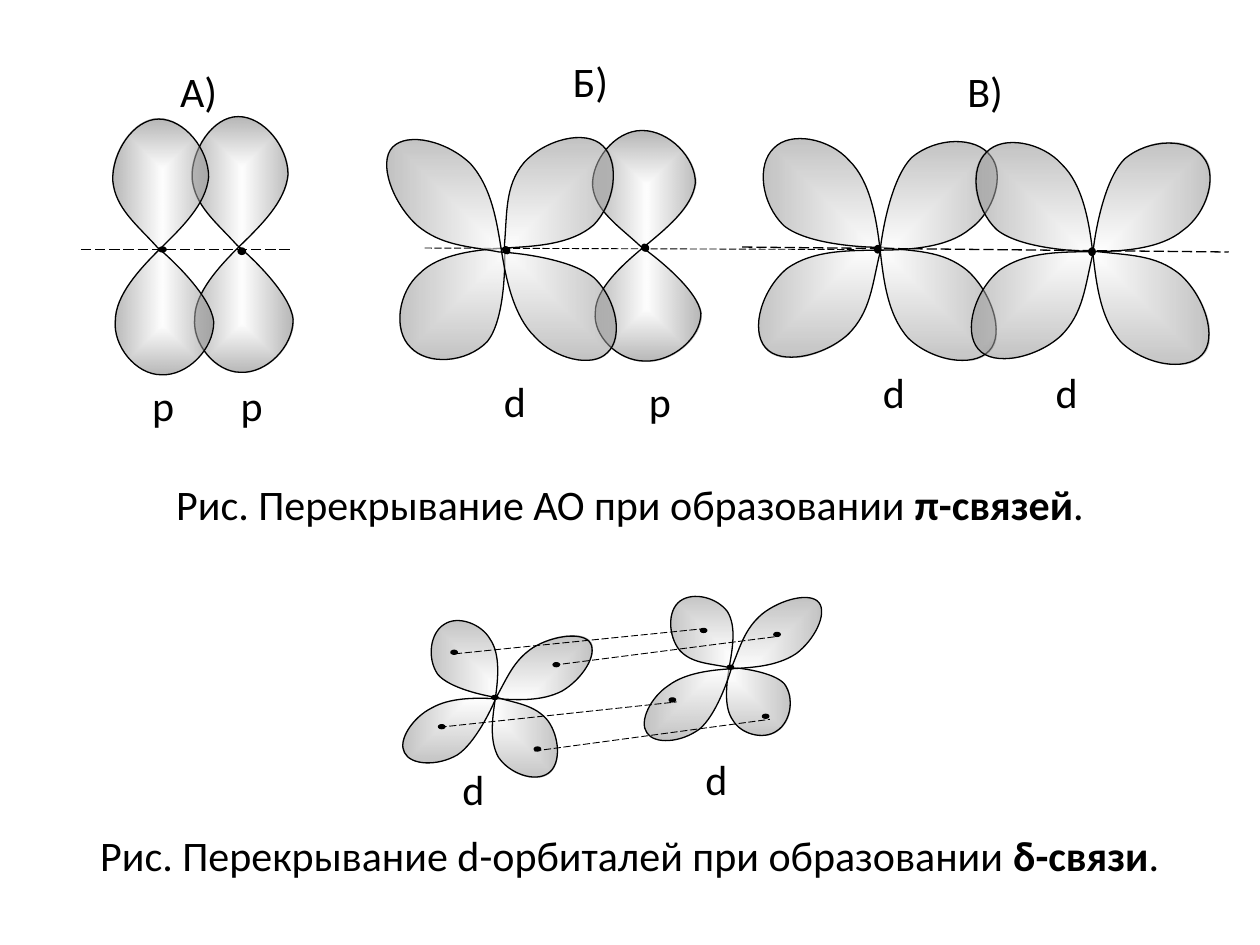
from typing import NamedTuple

from lxml import etree
from pptx import Presentation
from pptx.dml.color import RGBColor
from pptx.enum import dml, shapes, text
from pptx.oxml import parse_xml
from pptx.util import Cm, Pt

BLACK = RGBColor(0x00, 0x00, 0x00)
FONT = "Calibri"
A_NS = "http://schemas.openxmlformats.org/drawingml/2006/main"
LOBE_FILL = f"""<a:gradFill xmlns:a="{A_NS}" rotWithShape="1"><a:gsLst>
<a:gs pos="0"><a:srgbClr val="FFFFFF"><a:alpha val="54000"/></a:srgbClr></a:gs>
<a:gs pos="100000"><a:srgbClr val="7A7A7A"><a:alpha val="55000"/></a:srgbClr></a:gs>
</a:gsLst><a:path path="rect">
<a:fillToRect l="50000" t="50000" r="50000" b="50000"/></a:path></a:gradFill>"""

# Horizontal two-lobed outline: start point, then cubic Bezier segments
LOBE_SIZE = (204, 80)
LOBE_START = (102, 36)
LOBE_CURVES = [
    ((120, 20), (133, 3), (155, 1)),
    ((177, 0), (204, 17), (204, 37)),
    ((204, 57), (180, 76), (158, 76)),
    ((136, 74), (117, 54), (101, 38)),
    ((85, 22), (64, 3), (44, 3)),
    ((24, 1), (1, 19), (1, 39)),
    ((0, 59), (21, 80), (43, 80)),
    ((63, 78), (92, 48), LOBE_START),
]


class Orbital(NamedTuple):
    left: float
    top: float
    width: float
    height: float
    rotation: float


class Dot(NamedTuple):
    left: float
    top: float
    width: float = 0.13
    height: float = 0.08
    rotation: float = 0


class Dash(NamedTuple):
    x1: float
    y1: float
    x2: float
    y2: float
    weight: float = 0.5


class Label(NamedTuple):
    text: str
    left: float
    top: float


class Figure(NamedTuple):
    orbitals: list[Orbital]
    dots: list[Dot]
    axes: list[Dash]
    labels: list[Label]
    axes_behind: bool = False


FIGURES = [
    Figure(  # d-p overlap
        [Orbital(10.69, 3.86, 4.67, 2.21, 270),
         Orbital(7.42, 4.01, 5.64, 2.01, 314.2),
         Orbital(7.11, 4.14, 6.02, 1.75, 224.2)],
        [Dot(10.13, 4.98, 0.15, 0.13, 44.2), Dot(12.93, 4.93, 0.15, 0.13, 44.2)],
        [Dash(8.56, 5, 17.22, 5.03)],
        [Label("Б)", 11.3, 0.99), Label("d", 9.91, 7.44), Label("p", 12.83, 7.44)],
        axes_behind=True),
    Figure(  # p-p overlap
        [Orbital(2.29, 3.91, 5.18, 2.06, 270),
         Orbital(0.69, 3.96, 5.18, 2.06, 270)],
        [Dot(3.2, 4.98, 0.15, 0.1), Dot(4.8, 5, 0.15, 0.13)],
        [Dash(1.63, 5.03, 5.89, 5.03, 0.75)],
        [Label("А)", 3.38, 1.19), Label("p", 2.82, 7.52), Label("p", 4.6, 7.52)]),
    Figure(  # d-d overlap
        [Orbital(14.73, 4.09, 5.99, 1.93, 43.8),
         Orbital(14.68, 4.06, 5.99, 1.93, 140),
         Orbital(19.02, 4.17, 5.99, 1.93, 43.8),
         Orbital(18.97, 4.09, 5.99, 1.93, 140)],
        [Dot(17.63, 4.95, 0.13, 0.15), Dot(21.95, 5, 0.13, 0.15)],
        [Dash(14.96, 4.98, 24.77, 5.08, 0.75)],
        [Label("В)", 19.25, 1.19), Label("d", 17.55, 7.26), Label("d", 21.03, 7.26)]),
    Figure(  # delta bond
        [Orbital(13.08, 12.75, 3.28, 1.32, 233.8),
         Orbital(12.6, 12.93, 4.37, 1.12, 323.3),
         Orbital(7.85, 13.54, 4.37, 1.12, 329.9),
         Orbital(8.13, 13.44, 3.68, 1.32, 55.6)],
        [Dot(8.84, 14.61), Dot(14.66, 13.41), Dot(9.91, 14.02), Dot(10.77, 15.06),
         Dot(9.09, 13.11), Dot(14.12, 12.67), Dot(13.49, 14.07), Dot(15.6, 12.75),
         Dot(15.37, 14.4), Dot(11.15, 13.36)],
        [Dash(11.15, 13.41, 15.67, 12.83), Dash(9.17, 13.18, 14.22, 12.67),
         Dash(8.86, 14.66, 13.64, 14.15), Dash(10.77, 15.14, 15.52, 14.5)],
        [Label("d", 9.07, 15.27), Label("d", 13.97, 15.06)]),
]


def lobe_outline():
    """Return the curved outline as an a:path element."""
    def points(*pts):
        return "".join(f'<a:pt x="{x}" y="{y}"/>' for x, y in pts)

    curves = "".join(f"<a:cubicBezTo>{points(*c)}</a:cubicBezTo>" for c in LOBE_CURVES)
    w, h = LOBE_SIZE
    return parse_xml(f'<a:path xmlns:a="{A_NS}" w="{w}" h="{h}"><a:moveTo>'
                     f"{points(LOBE_START)}</a:moveTo>{curves}<a:close/></a:path>")


def replace_child(parent, tag: str, new) -> None:
    old = next(parent.iter(f"{{{A_NS}}}{tag}"))
    old.getparent().replace(old, new)


def outline(sp) -> None:
    sp.shadow.inherit = False
    sp.line.color.rgb = BLACK
    sp.line.width = Pt(0.75)


def draw_orbital(s, o: Orbital) -> None:
    """Build a freeform through the anchor points, then round its segments."""
    fb = s.shapes.build_freeform(*LOBE_START, scale=Cm(0.1))
    fb.add_line_segments([curve[-1] for curve in LOBE_CURVES])
    sp = fb.convert_to_shape()
    sp.left, sp.top, sp.width, sp.height = map(Cm, o[:4])
    sp.rotation = o.rotation
    sp.fill.background()
    replace_child(sp._element.spPr, "path", lobe_outline())
    replace_child(sp._element.spPr, "noFill", parse_xml(LOBE_FILL))
    outline(sp)


def draw_dot(s, d: Dot) -> None:
    sp = s.shapes.add_shape(shapes.MSO_SHAPE.OVAL, *map(Cm, d[:4]))
    sp.rotation = d.rotation
    sp.fill.solid()
    sp.fill.fore_color.rgb = BLACK
    outline(sp)


def draw_dash(s, d: Dash) -> None:
    c = s.shapes.add_connector(shapes.MSO_CONNECTOR.STRAIGHT, *map(Cm, d[:4]))
    c.line.color.rgb = BLACK
    c.line.width = Pt(d.weight)
    c.line.dash_style = dml.MSO_LINE.LONG_DASH
    etree.SubElement(c._element.spPr, f"{{{A_NS}}}effectLst")


def add_text(s, *parts: str, left: float, top: float, width: float = 1.4,
             height: float = 1.4, align=text.PP_ALIGN.LEFT, bold_part: int = -1) -> None:
    """Add a one-paragraph box with one run per part."""
    tf = s.shapes.add_textbox(Cm(left), Cm(top), Cm(width), Cm(height)).text_frame
    tf.word_wrap = True
    p = tf.paragraphs[0]
    p.alignment = align
    p.space_after = Pt(10)
    for i, part in enumerate(parts):
        r = p.add_run()
        r.text = part
        r.font.name, r.font.size, r.font.bold = FONT, Pt(24), i == bold_part
        r.font.color.rgb = BLACK


def draw_figure(s, f: Figure) -> None:
    body = [(draw_orbital, f.orbitals), (draw_dot, f.dots)]
    axes = [(draw_dash, f.axes)]
    for draw, items in axes + body if f.axes_behind else body + axes:
        for item in items:
            draw(s, item)
    for label in f.labels:
        add_text(s, label.text, left=label.left, top=label.top)


def main() -> None:
    prs = Presentation()
    prs.slide_width, prs.slide_height = Cm(25.4), Cm(19.05)
    s = prs.slides.add_slide(prs.slide_layouts[6])
    for figure in FIGURES:
        draw_figure(s, figure)
    caption = {"align": text.PP_ALIGN.CENTER, "bold_part": 1}
    add_text(s, "Рис. Перекрывание АО при образовании ", "π-связей", ".",
             left=0.89, top=9.53, width=23.62, **caption)
    add_text(s, "Рис. Перекрывание d-орбиталей при образовании ", "δ-связи", ".",
             left=1.19, top=16.59, width=23.01, **caption)
    prs.save("out.pptx")


if __name__ == "__main__":
    main()
